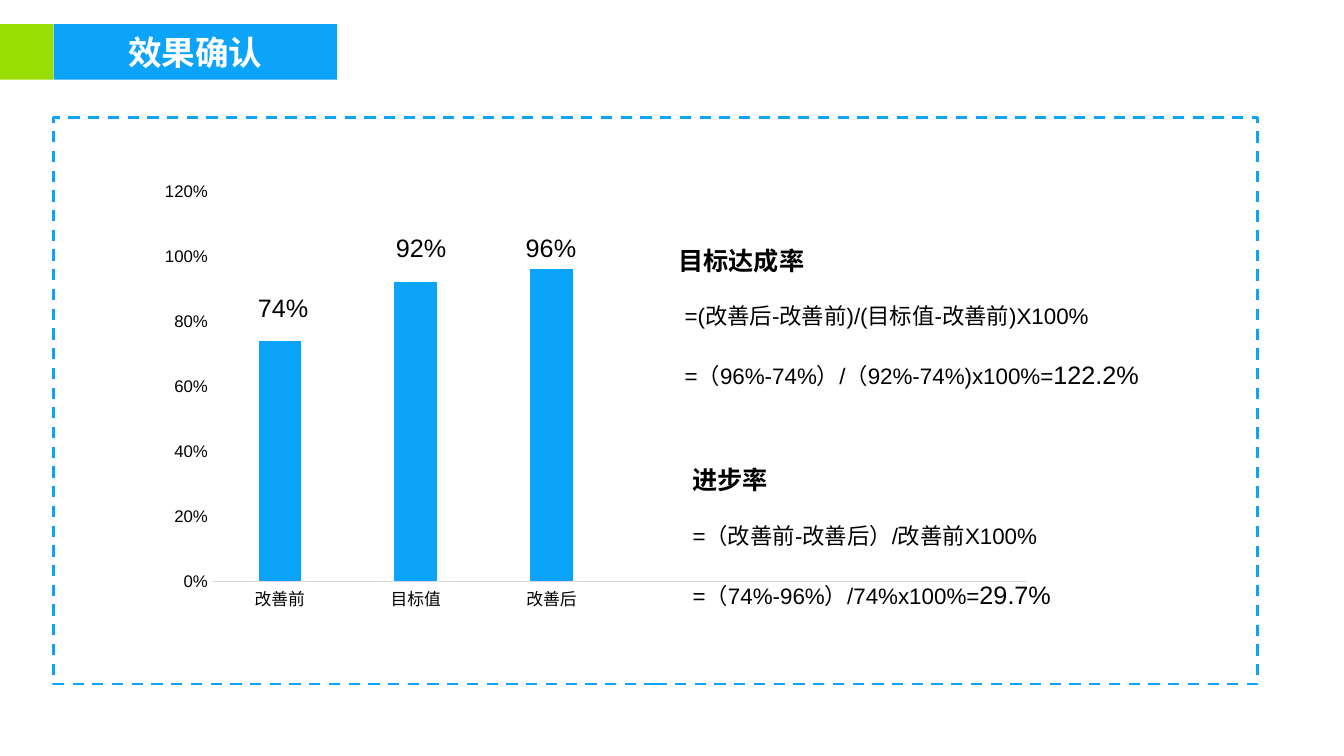
from dataclasses import dataclass
from lxml.etree import SubElement
from pptx import Presentation
from pptx.chart.data import CategoryChartData
from pptx.dml.color import RGBColor
from pptx.enum.chart import XL_CHART_TYPE as ChartType, XL_TICK_MARK as TickMark
from pptx.enum.dml import MSO_LINE
from pptx.enum.shapes import MSO_SHAPE
from pptx.enum.text import MSO_ANCHOR, MSO_AUTO_SIZE, PP_ALIGN
from pptx.oxml import parse_xml
from pptx.oxml.ns import nsdecls, qn
from pptx.util import Cm, Pt


@dataclass(frozen=True)
class Theme:
    font: str = "Arial"
    blue: RGBColor = RGBColor(0x0C, 0xA3, 0xFA)
    green: RGBColor = RGBColor(0x98, 0xDE, 0x04)
    grey: RGBColor = RGBColor(0xD9, 0xD9, 0xD9)
    black: RGBColor = RGBColor(0, 0, 0)
    white: RGBColor = RGBColor(255, 255, 255)
    title: Pt = Pt(24)
    strong: Pt = Pt(18)
    body: Pt = Pt(16)
    axis: Pt = Pt(12)


@dataclass(frozen=True)
class Box:
    left: float
    top: float
    width: float
    height: float

    def lengths(self):
        return Cm(self.left), Cm(self.top), Cm(self.width), Cm(self.height)


THEME = Theme()
RESULTS = {"改善前": 0.74, "目标值": 0.92, "改善后": 0.96}
EMPTY_SLOTS = 3
LABEL_OFFSETS = [(2.49, 2.87), (5.97, 1.35), (9.24, 1.35)]
PLOT_LAYOUT = {"x": 0.07, "y": 0.04, "w": 0.91, "h": 0.87}


def style_font(font, size, color=THEME.black, bold=False):
    font.name = THEME.font
    font.size = size
    font.bold = bold
    font.color.rgb = color


def place(shape, box):
    shape.left, shape.top, shape.width, shape.height = box.lengths()


def add_rectangle(slide, box):
    shape = slide.shapes.add_shape(MSO_SHAPE.RECTANGLE, *box.lengths())
    shape.shadow.inherit = False
    return shape


def add_heading(slide, box, accent_width):
    accent = add_rectangle(slide, Box(box.left, box.top, accent_width, box.height))
    accent.fill.solid()
    accent.fill.fore_color.rgb = THEME.green
    accent.line.fill.background()

    title = slide.shapes.title
    place(title, Box(box.left + accent_width, box.top, box.width - accent_width, box.height))
    title.fill.solid()
    title.fill.fore_color.rgb = THEME.blue
    frame = title.text_frame
    frame.text = "效果确认"
    frame.auto_size = MSO_AUTO_SIZE.NONE
    frame.vertical_anchor = MSO_ANCHOR.MIDDLE
    frame.margin_top = frame.margin_bottom = 0
    paragraph = frame.paragraphs[0]
    paragraph.alignment = PP_ALIGN.CENTER
    style_font(paragraph.font, THEME.title, THEME.white, bold=True)


def add_dashed_frame(slide, box):
    border = add_rectangle(slide, box)
    border.fill.background()
    border.line.color.rgb = THEME.blue
    border.line.width = Pt(2)
    border.line.dash_style = MSO_LINE.DASH


def fix_plot_area(chart):
    plot_area = chart.plots[0]._element.getparent()
    for old_layout in plot_area.findall(qn("c:layout")):
        plot_area.remove(old_layout)
    layout = parse_xml(f"<c:layout {nsdecls('c')}><c:manualLayout/></c:layout>")
    settings = {"layoutTarget": "inner", "xMode": "edge", "yMode": "edge", **PLOT_LAYOUT}
    for name, value in settings.items():
        SubElement(layout[0], qn(f"c:{name}")).set("val", str(value))
    plot_area.insert(0, layout)


def add_result_chart(slide, box):
    data = CategoryChartData(number_format="0%")
    data.categories = [*RESULTS, *[""] * EMPTY_SLOTS]
    data.add_series("Series 1", [*RESULTS.values(), *[None] * EMPTY_SLOTS])
    chart = slide.shapes.add_chart(ChartType.COLUMN_CLUSTERED, *box.lengths(), data).chart
    chart.has_legend = False
    chart.has_title = False
    style_font(chart.font, THEME.axis)
    fix_plot_area(chart)

    plot = chart.plots[0]
    plot.gap_width = 219
    plot.overlap = -27
    plot.vary_by_categories = False
    columns = plot.series[0].format.fill
    columns.solid()
    columns.fore_color.rgb = THEME.blue

    for axis in (chart.category_axis, chart.value_axis):
        axis.has_major_gridlines = False
        axis.major_tick_mark = axis.minor_tick_mark = TickMark.NONE
        style_font(axis.tick_labels.font, THEME.axis)
    chart.category_axis.format.line.color.rgb = THEME.grey
    chart.category_axis.format.line.width = Pt(0.75)
    values = chart.value_axis
    values.minimum_scale, values.maximum_scale, values.major_unit = 0, 1.2, 0.2
    values.tick_labels.number_format = "0%"
    values.tick_labels.number_format_is_linked = False
    values.format.line.fill.background()

    for value, (across, down) in zip(RESULTS.values(), LABEL_OFFSETS):
        label_box = Box(box.left + across, box.top + down, 2.18, 1.02)
        label = slide.shapes.add_textbox(*label_box.lengths())
        label.text_frame.word_wrap = True
        label.text_frame.text = f"{value:.0%}"
        style_font(label.text_frame.paragraphs[0].font, THEME.strong)


def add_formula(slide, placeholder, box, heading, rule, working, answer, indent=0):
    place(placeholder, box)
    slide.shapes._spTree.append(placeholder._element)
    frame = placeholder.text_frame
    frame.word_wrap = True
    frame.auto_size = MSO_AUTO_SIZE.NONE
    frame.vertical_anchor = MSO_ANCHOR.TOP
    frame.text = f"{heading}\n{rule}\n"
    heading_line, rule_line, working_line = frame.paragraphs
    style_font(heading_line.font, THEME.strong, bold=True)
    style_font(rule_line.font, THEME.body)
    for text, size in ((working, THEME.body), (answer, THEME.strong)):
        run = working_line.add_run()
        run.text = text
        style_font(run.font, size)

    for paragraph, left in zip(frame.paragraphs, (0, indent, indent)):
        paragraph.line_spacing = 2.0
        paragraph.space_before = Pt(0)
        properties = paragraph._p.get_or_add_pPr()
        properties.set("marL", str(Cm(left)))
        properties.set("indent", "0")
        bullet = parse_xml(f"<a:buNone {nsdecls('a')}/>")
        properties.insert_element_before(bullet, "a:tabLst", "a:defRPr", "a:extLst")


def build_result_slide(presentation):
    slide = presentation.slides.add_slide(presentation.slide_layouts[3])
    _, target_body, progress_body = slide.placeholders
    add_heading(slide, Box(0, 0.61, 8.49, 1.4), accent_width=1.35)
    add_dashed_frame(slide, Box(1.35, 2.97, 30.35, 14.27))
    add_result_chart(slide, Box(3.76, 4.37, 22.58, 11.3))
    add_formula(slide, target_body, Box(16.84, 5.28, 15.62, 6.25), "目标达成率",
                "=(改善后-改善前)/(目标值-改善前)X100%",
                "=（96%-74%）/（92%-74%)x100%=", "122.2%", indent=0.16)
    add_formula(slide, progress_body, Box(17.2, 10.82, 12.09, 4.47), "进步率",
                "=（改善前-改善后）/改善前X100%",
                "=（74%-96%）/74%x100%=", "29.7%")


def main():
    presentation = Presentation()
    presentation.slide_width = Cm(33.87)
    presentation.slide_height = Cm(19.05)
    build_result_slide(presentation)
    presentation.save("out.pptx")


if __name__ == "__main__":
    main()
